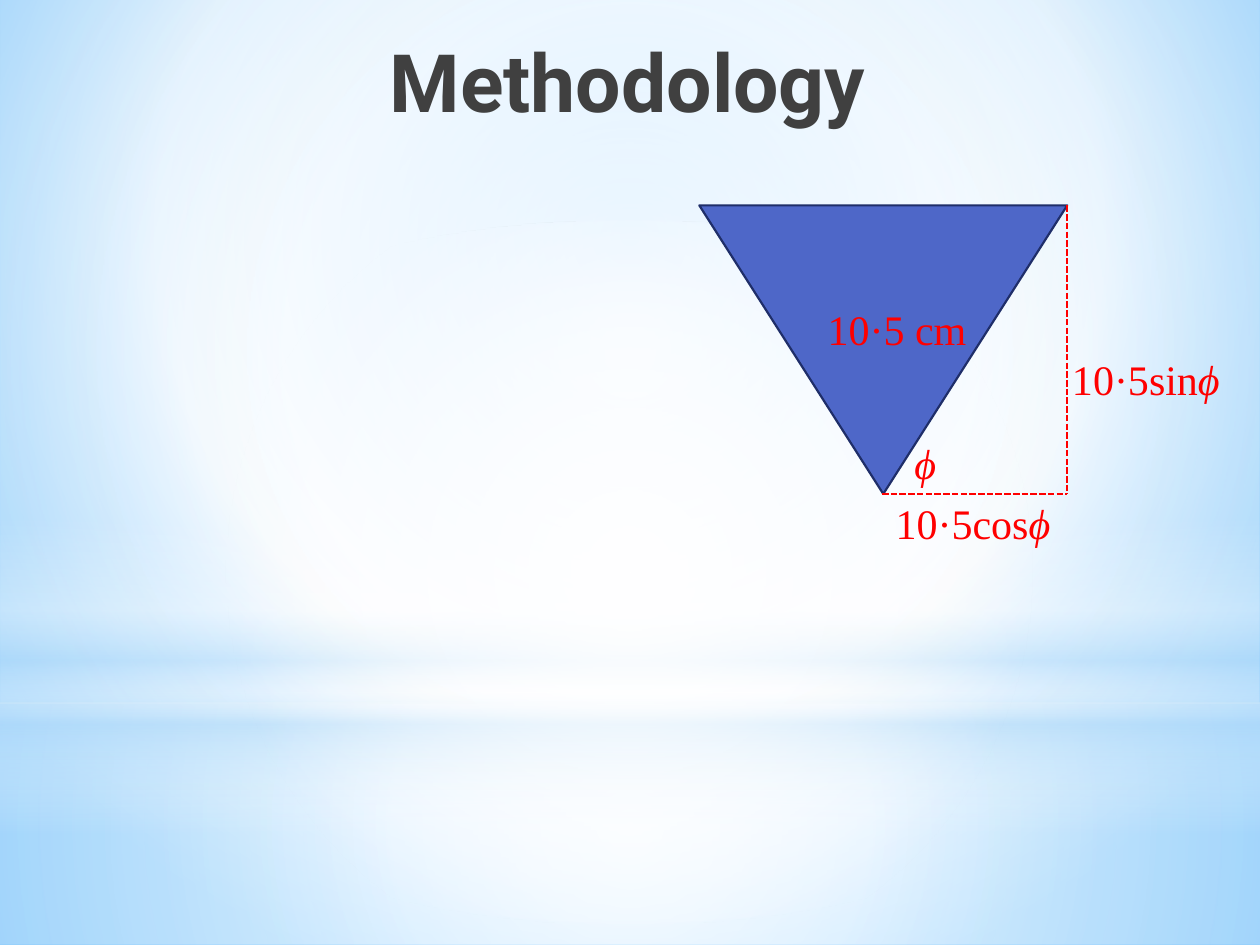
from lxml import etree
from pptx import Presentation
from pptx.dml.color import RGBColor
from pptx.enum.dml import MSO_LINE
from pptx.enum.shapes import MSO_CONNECTOR, MSO_SHAPE
from pptx.enum.text import MSO_ANCHOR, PP_ALIGN
from pptx.oxml.ns import qn
from pptx.util import Inches, Pt

RECT, OVAL, TRIANGLE = MSO_SHAPE.RECTANGLE, MSO_SHAPE.OVAL, MSO_SHAPE.ISOSCELES_TRIANGLE
STRAIGHT, DASHED = MSO_CONNECTOR.STRAIGHT, MSO_LINE.SQUARE_DOT
TOP, CENTER = MSO_ANCHOR.TOP, PP_ALIGN.CENTER

RED = RGBColor(0xFF, 0x00, 0x00)
GREY = RGBColor(0x40, 0x40, 0x40)
BLUE = RGBColor(0x4E, 0x67, 0xC8)
NAVY = RGBColor(0x1F, 0x2E, 0x69)
WHITE = RGBColor(0xFF, 0xFF, 0xFF)
PALE = RGBColor(0xB4, 0xDC, 0xFA)
SKY = RGBColor(0x9E, 0xD5, 0xFF)
AZURE = RGBColor(0x5B, 0xB9, 0xFF)

prs = Presentation()
prs.slide_width, prs.slide_height = Inches(10), Inches(7.5)
slide = prs.slides.add_slide(prs.slide_layouts[5])
shapes = slide.shapes


def set_gradient(properties, stops, focus=None):
    """Swap a solid fill for a gradient: circular around focus, else top to bottom."""
    solid = properties.find(qn("a:solidFill"))
    gradient = etree.Element(qn("a:gradFill"), rotWithShape="1")
    stop_list = etree.SubElement(gradient, qn("a:gsLst"))
    for position, color, opacity in stops:
        stop = etree.SubElement(stop_list, qn("a:gs"), pos=str(position * 1000))
        rgb = etree.SubElement(stop, qn("a:srgbClr"), val=str(color))
        if opacity < 100:
            etree.SubElement(rgb, qn("a:alpha"), val=str(opacity * 1000))
    if focus:
        circle = etree.SubElement(gradient, qn("a:path"), path="circle")
        sides = {side: str(share * 1000) for side, share in zip("ltrb", focus)}
        etree.SubElement(circle, qn("a:fillToRect"), sides)
    else:
        etree.SubElement(gradient, qn("a:lin"), ang="5400000", scaled="0")
    properties.replace(solid, gradient)


# Background
slide.background.fill.solid()
set_gradient(slide.element.find(".//" + qn("p:bgPr")),
             [(0, SKY, 100), (60, WHITE, 100), (100, AZURE, 100)], (20, 10, 20, 60))

# Floor, wall, horizon band and glow: full-width layers
MIDDLE = (50, 50, 50, 50)
HORIZON = 5.58
layers = [
    (RECT, HORIZON, 7.5 - HORIZON, MIDDLE,
     [(0, WHITE, 91), (37, WHITE, 76), (100, PALE, 79)]),
    (RECT, 0, HORIZON, MIDDLE,
     [(0, WHITE, 89), (48, WHITE, 62), (100, PALE, 79)]),
    (RECT, 4.12, 2.5, None,
     [(0, WHITE, 0), (29, WHITE, 30), (45, PALE, 40),
      (55, WHITE, 26), (65, PALE, 60), (100, WHITE, 0)]),
    (OVAL, 1.75, HORIZON, MIDDLE, [(0, WHITE, 100), (56, WHITE, 0)]),
]
for kind, top, height, focus, stops in layers:
    layer = shapes.add_shape(kind, 0, Inches(top), prs.slide_width, Inches(height))
    layer.shadow.inherit = False
    layer.line.fill.background()
    layer.fill.solid()
    set_gradient(layer.element.spPr, stops, focus)

# Title, brought in front of the layers
title = shapes.title
title.element.getparent().append(title.element)
title.left, title.top, title.width, title.height = map(Inches, (1.42, 0.2, 7.12, 1.25))
title.text_frame.text = "Methodology"
title.text_frame.vertical_anchor = TOP
heading = title.text_frame.paragraphs[0]
heading.alignment = CENTER
heading.font.name, heading.font.size, heading.font.bold = "Roboto", Pt(46), True
heading.font.color.rgb = GREY

# Cone section, apex down
RIM, APEX, LEFT, RIGHT = 1.63, 3.92, 5.55, 8.47
cone = shapes.add_shape(TRIANGLE, Inches(LEFT), Inches(RIM),
                        Inches(RIGHT - LEFT), Inches(APEX - RIM))
cone.rotation = 180
cone.adjustments[0] = 0.5
cone.shadow.inherit = False
cone.fill.solid()
cone.fill.fore_color.rgb = BLUE
cone.line.color.rgb, cone.line.width = NAVY, Pt(1.25)

# Dashed legs of the right triangle beside it
for start, end in [((7, APEX), (RIGHT, APEX)), ((RIGHT, RIM), (RIGHT, APEX))]:
    leg = shapes.add_connector(STRAIGHT, *map(Inches, start + end))
    leg.line.color.rgb, leg.line.width = RED, Pt(1.25)
    leg.line.dash_style = DASHED
    etree.SubElement(leg.element.spPr, qn("a:effectLst"))

# Labels: upright part, then italic angle
labels = [
    (7.16, 3.42, 0.47, "", "ϕ"),
    (6.47, 2.36, 1.54, "10·5 cm", ""),
    (8.41, 2.76, 1.54, "10·5sin", "ϕ"),
    (7.01, 3.9, 1.54, "10·5cos", "ϕ"),
]
for left, top, width, measure, angle in labels:
    label = shapes.add_textbox(*map(Inches, (left, top, width, 0.5))).text_frame
    label.word_wrap = True
    line = label.paragraphs[0]
    line.font.name, line.font.size = "Times New Roman", Pt(24)
    line.font.color.rgb = RED
    for part, italic in ((measure, False), (angle, True)):
        if part:
            run = line.add_run()
            run.text, run.font.italic = part, italic

prs.save("out.pptx")
